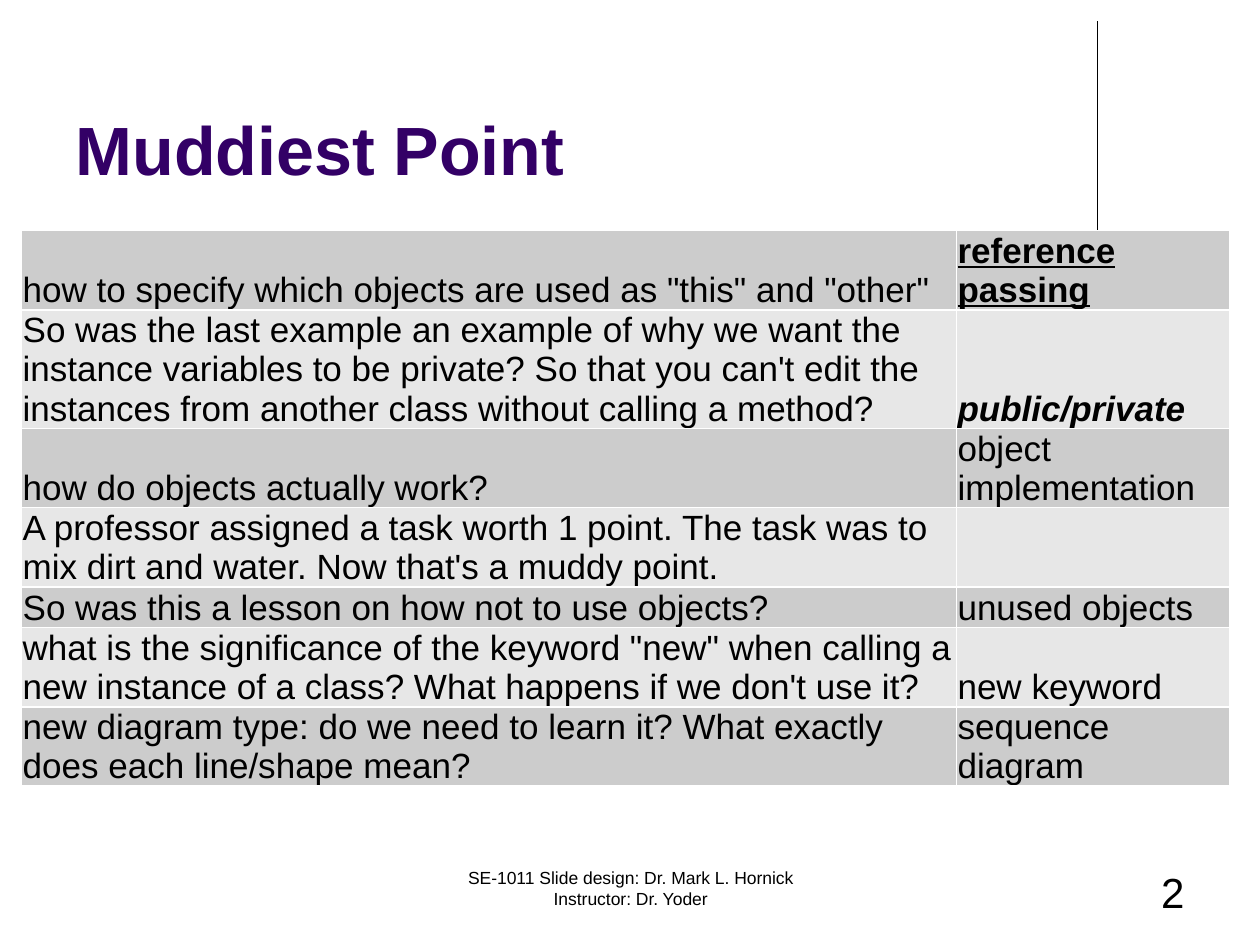
from lxml.etree import SubElement
from pptx import Presentation
from pptx.dml.color import RGBColor
from pptx.enum.shapes import MSO_CONNECTOR
from pptx.enum.text import MSO_ANCHOR, PP_ALIGN
from pptx.oxml.ns import qn
from pptx.util import Inches, Pt

FONT = "Arial"
BLACK, PURPLE = "000000", "330066"
BANDS = ("CCCCCC", "E7E7E7")
LINE_HEIGHT = 0.31

# Question, topic, lines in the row, topic emphasis
QUESTIONS = [
    ('how to specify which objects are used as "this" and "other"',
     "reference passing", 2, {"bold": True, "underline": True}),
    ("So was the last example an example of why we want the instance variables "
     "to be private? So that you can't edit the instances from another class "
     "without calling a method?",
     "public/private", 3, {"bold": True, "italic": True}),
    ("how do objects actually work?", "object implementation", 2, {}),
    ("A professor assigned a task worth 1 point. The task was to mix dirt and "
     "water. Now that's a muddy point.", "", 2, {}),
    ("So was this a lesson on how not to use objects?", "unused objects", 1, {}),
    ('what is the significance of the keyword "new" when calling a new instance '
     "of a class? What happens if we don't use it?", "new keyword", 2, {}),
    ("new diagram type: do we need to learn it? What exactly does each "
     "line/shape mean?", "sequence diagram", 2, {}),
]


def color(value):
    return RGBColor.from_string(value)


def write(tf, text, size, fill=BLACK, align=PP_ALIGN.LEFT, **emphasis):
    tf.text = text
    p = tf.paragraphs[0]
    p.alignment = align
    for font in [p.font] + [r.font for r in p.runs]:
        font.name, font.size = FONT, Pt(size)
        font.color.rgb = color(fill)
        for name, value in emphasis.items():
            setattr(font, name, value)


def place(shape, box):
    shape.left, shape.top, shape.width, shape.height = map(Inches, box)


def add_title(slide, box):
    title = slide.shapes.title
    place(title, box)
    tf = title.text_frame
    tf.word_wrap = True
    tf.vertical_anchor = MSO_ANCHOR.BOTTOM
    write(tf, "Muddiest Point", 39, PURPLE, bold=True)


def add_rule(slide, x, top, bottom):
    line = slide.shapes.add_connector(
        MSO_CONNECTOR.STRAIGHT, Inches(x), Inches(top), Inches(x), Inches(bottom))
    line.line.color.rgb = color(BLACK)
    line.line.width = Pt(0.75)
    SubElement(line._element.spPr, qn("a:effectLst"))


def add_questions(slide, left, top, col_widths):
    height = LINE_HEIGHT * sum(lines for _, _, lines, _ in QUESTIONS)
    table = slide.shapes.add_table(
        len(QUESTIONS), len(col_widths), Inches(left), Inches(top),
        Inches(sum(col_widths)), Inches(height)).table
    table.first_row = table.horz_banding = False
    for column, width in zip(table.columns, col_widths):
        column.width = Inches(width)

    for i, (question, topic, lines, emphasis) in enumerate(QUESTIONS):
        table.rows[i].height = Inches(LINE_HEIGHT * lines)
        for j, (text, style) in enumerate([(question, {}), (topic, emphasis)]):
            cell = table.cell(i, j)
            cell.fill.solid()
            cell.fill.fore_color.rgb = color(BANDS[i % 2])
            cell.vertical_anchor = MSO_ANCHOR.BOTTOM
            cell.margin_left = cell.margin_right = cell.margin_top = Inches(0.01)
            cell.margin_bottom = 0
            write(cell.text_frame, text, 20, **style)


def add_footer_text(slide, box, text, size, align):
    tf = slide.shapes.add_textbox(*map(Inches, box)).text_frame
    tf.word_wrap = True
    write(tf, text, size, align=align)


def main():
    prs = Presentation()
    prs.slide_width, prs.slide_height = Inches(10), Inches(7.5)
    slide = prs.slides.add_slide(prs.slide_layouts[5])

    # Header
    add_rule(slide, 8.71, 0.17, 1.83)
    add_title(slide, (0.5, 0.13, 8.25, 1.42))

    # Questions and their topics
    add_questions(slide, 0.17, 1.83, (7.42, 2.17))

    # Footer
    add_footer_text(slide, (3.42, 6.83, 3.17, 0.5),
                    "SE-1011 Slide design: Dr. Mark L. Hornick Instructor: Dr. Yoder",
                    10, PP_ALIGN.CENTER)
    add_footer_text(slide, (7.17, 6.83, 2.33, 0.5), "2", 24, PP_ALIGN.RIGHT)

    prs.save("out.pptx")


if __name__ == "__main__":
    main()
